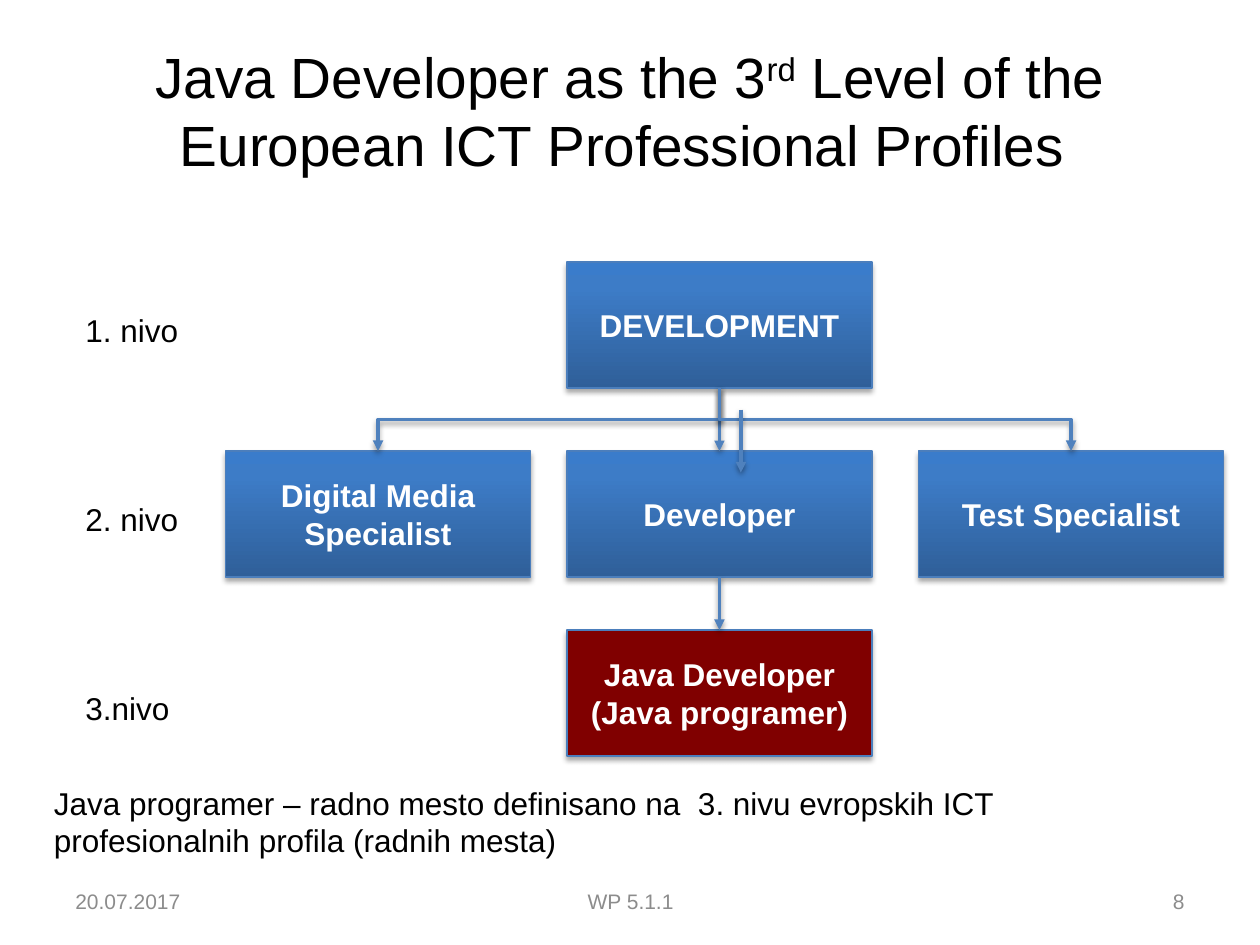
from copy import deepcopy

from lxml import etree
from pptx import Presentation
from pptx import util as u
from pptx.dml.color import RGBColor
from pptx.enum import shapes, text
from pptx.oxml import ns

COLORS = {
    "black": "000000", "white": "FFFFFF", "muted": "8C8C8C",
    "bottom": "2F5F99", "middle": "3D7CC7", "top": "3A7CCB",
    "border": "4B7EBC", "arrow": "4F81BD", "highlight": "800000",
}
TITLE = [("Java Developer as the 3", False), ("rd", True),
         (" Level of the European ICT Professional Profiles ", False)]
PROFILES = {
    "development": ("DEVELOPMENT", 4.5, 2.08),
    "developer": ("Developer", 4.5, 3.58),
    "media": ("Digital Media Specialist", 1.79, 3.58),
    "test": ("Test Specialist", 7.29, 3.58),
    "java": ("Java Developer (Java programer)", 4.5, 5),
}
BOX_W, BOX_H = 2.42, 1
STRAIGHT_LINKS = [("development", "developer"), ("developer", "java")]
BENT_LINKS = [("development", "media"), ("development", "test")]
STRAY_ARROW = (5.88, 3.25, 5.88, 3.75)
LEVELS = ["1. nivo", "2. nivo", "3.nivo"]
LEVEL_TOP, LEVEL_STEP = 2.42, 1.5
SUMMARY = ("Java programer – radno mesto definisano na  3. nivu evropskih ICT  "
           "profesionalnih profila (radnih mesta)")
ALIGN = text.PP_ALIGN
FOOTER = [("20.07.2017", 0.5, 2.33, ALIGN.LEFT),
          ("WP 5.1.1", 3.42, 3.17, ALIGN.CENTER),
          ("8", 7.17, 2.33, ALIGN.RIGHT)]


def rgb(name):
    return RGBColor.from_string(COLORS[name])


def write(frame, runs, size=18, color="black", bold=False, align=ALIGN.LEFT,
          anchor=text.MSO_ANCHOR.TOP, wrap=True):
    frame.word_wrap = wrap
    frame.vertical_anchor = anchor
    paragraph = frame.paragraphs[0]
    paragraph.alignment = align
    for words, raised in [(runs, False)] if isinstance(runs, str) else runs:
        run = paragraph.add_run()
        run.text = words
        run.font.name = "Arial"
        run.font.size = u.Pt(size)
        run.font.bold = bold
        run.font.color.rgb = rgb(color)
        if raised:
            run.font._element.set("baseline", "30000")


def add_label(slide, words, left, top, width, height, **style):
    label = slide.shapes.add_textbox(*map(u.Inches, (left, top, width, height)))
    write(label.text_frame, words, **style)


def add_shadow(properties, distance, opacity):
    effects = properties.find(ns.qn("a:effectLst"))
    if effects is None:
        effects = etree.SubElement(properties, ns.qn("a:effectLst"))
    shadow = etree.SubElement(effects, ns.qn("a:outerShdw"), blurRad=str(u.Pt(3.1)),
                              dist=str(u.Pt(distance)), dir="5400000", rotWithShape="0")
    tint = etree.SubElement(shadow, ns.qn("a:srgbClr"), val=COLORS["black"])
    etree.SubElement(tint, ns.qn("a:alpha"), val=str(opacity * 1000))


def fill_gradient(box):
    box.fill.gradient()
    box.fill.gradient_angle = 90
    stops = box._element.spPr.find(ns.qn("a:gradFill")).find(ns.qn("a:gsLst"))
    stops.append(deepcopy(stops[-1]))
    for stop, name, position in zip(box.fill.gradient_stops,
                                    ("bottom", "middle", "top"), (0, 0.8, 1)):
        stop.color.rgb = rgb(name)
        stop.position = position


def add_profile(slide, words, left, top, highlighted):
    box = slide.shapes.add_shape(shapes.MSO_SHAPE.RECTANGLE,
                                 *map(u.Inches, (left, top, BOX_W, BOX_H)))
    if highlighted:
        box.fill.solid()
        box.fill.fore_color.rgb = rgb("highlight")
    else:
        fill_gradient(box)
    box.line.color.rgb = rgb("border")
    box.line.width = u.Pt(0.75)
    box.shadow.inherit = False
    add_shadow(box._element.spPr, 1.8, 35)
    write(box.text_frame, words, color="white", bold=True, align=ALIGN.CENTER,
          anchor=text.MSO_ANCHOR.MIDDLE)
    return box


def add_arrow(slide, kind, ends=(0, 0, 0, 0), source=None, target=None):
    arrow = slide.shapes.add_connector(kind, *map(u.Inches, ends))
    if source is not None:
        arrow.begin_connect(source, 2)
        arrow.end_connect(target, 0)
    arrow.line.color.rgb = rgb("arrow")
    arrow.line.width = u.Pt(2)
    etree.SubElement(arrow.line._get_or_add_ln(), ns.qn("a:tailEnd"), type="triangle")
    add_shadow(arrow._element.spPr, 1.6, 38)
    return arrow


def bend_down(arrow):
    x1, y1, x2, y2 = arrow.begin_x, arrow.begin_y, arrow.end_x, arrow.end_y
    drop, reach = y2 - y1, abs(x2 - x1)
    frame = arrow._element.spPr.find(ns.qn("a:xfrm"))
    for flip in ("flipH", "flipV"):
        frame.attrib.pop(flip, None)
    arrow.left, arrow.top = (x1 + x2 - drop) // 2, (y1 + y2 - reach) // 2
    arrow.width, arrow.height = drop, reach
    if x2 < x1:
        frame.set("rot", "5400000")
    else:
        frame.set("rot", "16200000")
        frame.set("flipH", "1")


def main():
    deck = Presentation()
    deck.slide_width, deck.slide_height = u.Inches(10), u.Inches(7.5)
    slide = deck.slides.add_slide(deck.slide_layouts[5])

    title = slide.shapes.title
    title.left, title.top, title.width, title.height = map(u.Inches, (0.5, 0.25, 9, 1.25))
    write(title.text_frame, TITLE, size=32.4, align=ALIGN.CENTER,
          anchor=text.MSO_ANCHOR.MIDDLE)

    for words, left, width, align in FOOTER:
        add_label(slide, words, left, 6.95, width, 0.4, size=12, color="muted",
                  align=align, anchor=text.MSO_ANCHOR.MIDDLE)

    boxes = {key: add_profile(slide, *profile, highlighted=key == "java")
             for key, profile in PROFILES.items()}
    connector = shapes.MSO_CONNECTOR
    for source, target in STRAIGHT_LINKS:
        add_arrow(slide, connector.STRAIGHT, source=boxes[source], target=boxes[target])
    for source, target in BENT_LINKS:
        bend_down(add_arrow(slide, connector.ELBOW, source=boxes[source],
                            target=boxes[target]))
    add_arrow(slide, connector.STRAIGHT, STRAY_ARROW)

    for row, level in enumerate(LEVELS):
        add_label(slide, level, 0.58, LEVEL_TOP + row * LEVEL_STEP, 0.95, 0.4, wrap=False)
    add_label(slide, SUMMARY, 0.33, 6.17, 9.25, 0.71)
    deck.save("out.pptx")


if __name__ == "__main__":
    main()
